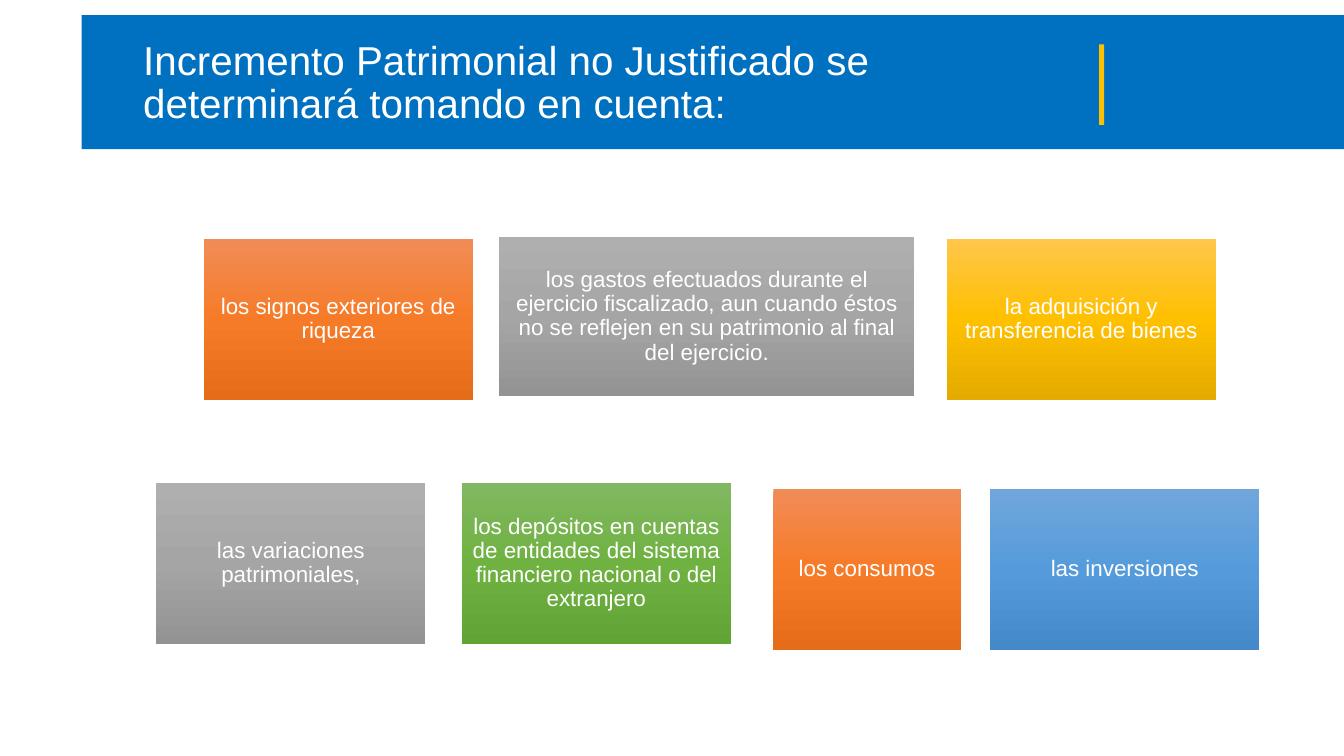
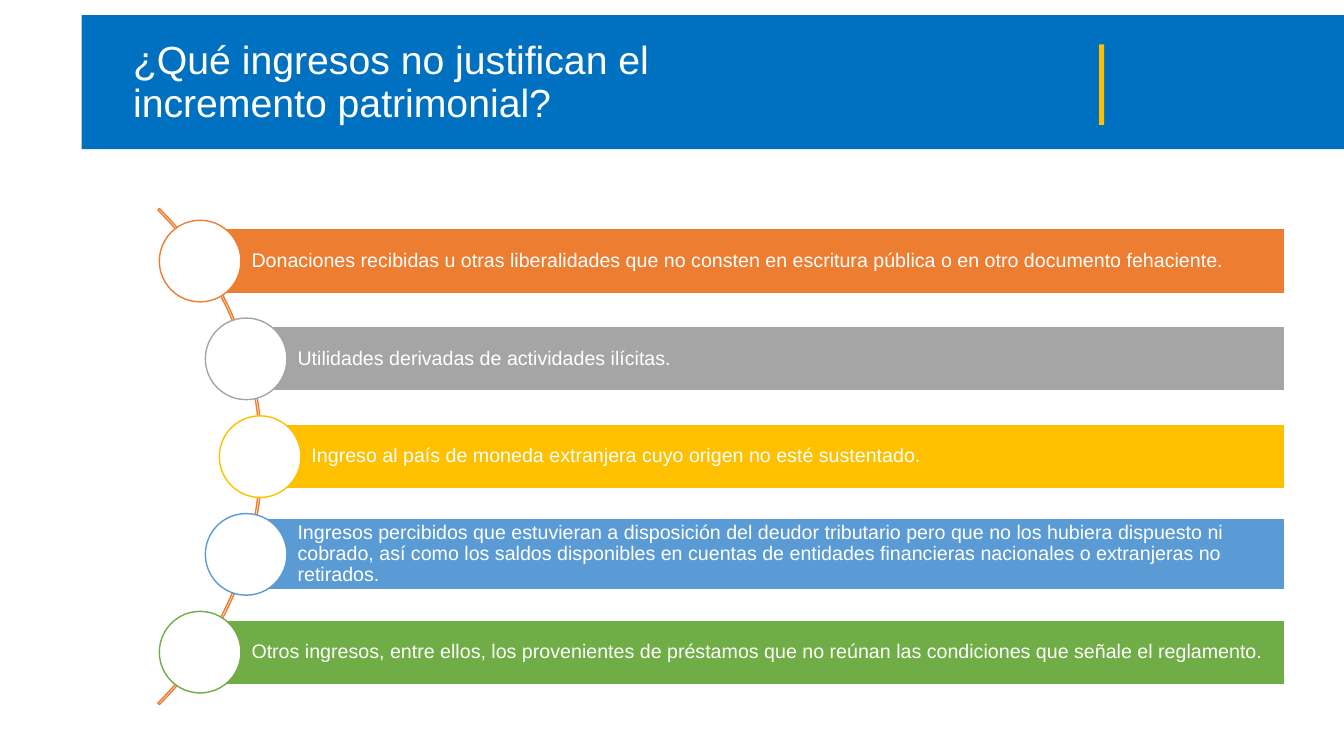
import copy
import dataclasses
import math

import pptx
import pptx.dml.color
import pptx.enum.shapes
import pptx.enum.text
import pptx.util

Inches = pptx.util.Inches
Shape = pptx.enum.shapes.MSO_SHAPE
Align = pptx.enum.text.PP_ALIGN
Anchor = pptx.enum.text.MSO_ANCHOR


@dataclasses.dataclass(frozen=True)
class Theme:
    font: str = "Arial"
    white: str = "FFFFFF"
    band: str = "0070C0"
    orange: str = "ED7D31"
    gray: str = "A5A5A5"
    gold: str = "FFC000"
    blue: str = "5B9BD5"
    green: str = "70AD47"
    orange_shades: tuple = ("F18C57", "F67B28", "E56C19")
    gray_shades: tuple = ("AFAFAF", "A5A5A5", "939393")
    gold_shades: tuple = ("FFC64B", "FFC000", "E3AB00")
    blue_shades: tuple = ("71A6DB", "559BDB", "448ACA")
    green_shades: tuple = ("81B861", "6FB242", "62A336")
    card_size: float = 16
    bar_size: float = 14
    line_width: float = 1
    line_spacing: float = 0.9


THEME = Theme()

# Left, top, width, height, gradient, text
CARDS = [
    (2.02, 2.37, 2.67, 1.6, THEME.orange_shades, "los signos exteriores de riqueza"),
    (4.95, 2.35, 4.12, 1.58, THEME.gray_shades,
     "los gastos efectuados durante el ejercicio fiscalizado, aun cuando éstos "
     "no se reflejen en su patrimonio al final del ejercicio."),
    (9.39, 2.37, 2.67, 1.6, THEME.gold_shades, "la adquisición y transferencia de bienes"),
    (1.55, 4.79, 2.67, 1.6, THEME.gray_shades, "las variaciones patrimoniales,"),
    (4.58, 4.79, 2.67, 1.6, THEME.green_shades,
     "los depósitos en cuentas de entidades del sistema financiero nacional o "
     "del extranjero"),
    (7.67, 4.85, 1.86, 1.6, THEME.orange_shades, "los consumos"),
    (9.82, 4.85, 2.67, 1.6, THEME.blue_shades, "las inversiones"),
]

# Colour, bar height, text
INCOMES = [
    (THEME.orange, 0.64,
     "Donaciones recibidas u otras liberalidades que no consten en escritura "
     "pública o en otro documento fehaciente."),
    (THEME.gray, 0.64, "Utilidades derivadas de actividades ilícitas."),
    (THEME.gold, 0.64,
     "Ingreso al país de moneda extranjera cuyo origen no esté sustentado."),
    (THEME.blue, 0.71,
     "Ingresos percibidos que estuvieran a disposición del deudor tributario pero "
     "que no los hubiera dispuesto ni cobrado, así como los saldos disponibles en "
     "cuentas de entidades financieras nacionales o extranjeras no retirados."),
    (THEME.green, 0.64,
     "Otros ingresos, entre ellos, los provenientes de préstamos que no reúnan "
     "las condiciones que señale el reglamento."),
]


def rgb(color):
    return pptx.dml.color.RGBColor.from_string(color)


def set_values(target, values):
    for name, value in values.items():
        setattr(target, name, value)


def add_figure(page, kind, area, fill=None, line=None):
    """Add a flat preset shape; area is left, top, width, height in inches."""
    figure = page.shapes.add_shape(kind, *map(Inches, area))
    figure.shadow.inherit = False
    if fill:
        figure.fill.solid()
        figure.fill.fore_color.rgb = rgb(fill)
    else:
        figure.fill.background()
    if line:
        figure.line.color.rgb = rgb(line)
        figure.line.width = pptx.util.Pt(THEME.line_width)
    else:
        figure.line.fill.background()
    return figure


def shade(figure, colors):
    """Fill a shape with evenly spaced colours from top to bottom."""
    figure.fill.gradient()
    stop_list = figure._element.spPr.xpath(".//a:gsLst")[0]
    while len(stop_list) < len(colors):
        stop_list.append(copy.deepcopy(stop_list[0]))
    for index, (stop, color) in enumerate(zip(figure.fill.gradient_stops, colors)):
        stop.position = index / (len(colors) - 1)
        stop.color.rgb = rgb(color)
    figure.fill.gradient_angle = 270


def write(box, text, size, alignment, margins):
    """Write one white paragraph; margins are left, top, right, bottom."""
    frame = box.text_frame
    frame.text = text
    sides = ("margin_left", "margin_top", "margin_right", "margin_bottom")
    set_values(frame, dict(zip(sides, map(Inches, margins))))
    set_values(frame, {
        "word_wrap": True,
        "auto_size": pptx.enum.text.MSO_AUTO_SIZE.NONE,
        "vertical_anchor": Anchor.MIDDLE,
    })
    para = frame.paragraphs[0]
    set_values(para, {"alignment": alignment, "line_spacing": THEME.line_spacing})
    for span in para.runs:
        set_values(span.font, {"name": THEME.font, "size": pptx.util.Pt(size)})
        span.font.color.rgb = rgb(THEME.white)


def add_band_to_layout(page):
    """Place the title band on the layout, behind everything on its slides."""
    band = add_figure(page, Shape.RECTANGLE, (0.81, 0.15, 12.52, 1.33), THEME.band)
    accent = add_figure(page, Shape.RECTANGLE, (10.9, 0.44, 0.05, 0.8), THEME.gold)
    tree = page.slide_layout.shapes._spTree
    for position, figure in enumerate((band, accent), start=2):
        tree.insert(position, figure._element)


def set_title(page, text, area, size):
    title = page.shapes.title
    set_values(title, dict(zip(("left", "top", "width", "height"), map(Inches, area))))
    write(title, text, size, Align.LEFT, (0.1, 0.05, 0.1, 0.05))


def add_card(page, area, colors, text):
    card = add_figure(page, Shape.RECTANGLE, area)
    shade(card, colors)
    write(card, text, THEME.card_size, Align.CENTER, (0.07,) * 4)


def add_income_list(page):
    """Draw bars whose circles follow an arc centred left of the slide."""
    center_x, center_y, arc_radius = -0.88, 4.53, 3.48
    circle_path_radius, circle_size = 3.46, 0.81
    pitch, bar_right = 0.97, 12.74

    arc = add_figure(
        page, Shape.BLOCK_ARC,
        (center_x - arc_radius, center_y - arc_radius, 2 * arc_radius, 2 * arc_radius),
        line=THEME.orange)
    for index, value in enumerate((189, 27, 0.003)):
        arc.adjustments[index] = value

    for index, (color, height, text) in enumerate(INCOMES):
        offset = (index - (len(INCOMES) - 1) / 2) * pitch
        middle = center_y + offset
        left = center_x + math.sqrt(circle_path_radius ** 2 - offset ** 2)
        bar = add_figure(page, Shape.RECTANGLE,
                         (left, middle - height / 2, bar_right - left, height),
                         color, THEME.white)
        write(bar, text, THEME.bar_size, Align.LEFT, (0.51, 0.04, 0.04, 0.04))
        add_figure(page, Shape.OVAL,
                   (left - circle_size / 2, middle - circle_size / 2,
                    circle_size, circle_size),
                   THEME.white, color)


def main():
    deck = pptx.Presentation()
    set_values(deck, {"slide_width": Inches(13.33), "slide_height": Inches(7.5)})
    layout = deck.slide_layouts.get_by_name("Title Only")

    factors = deck.slides.add_slide(layout)
    add_band_to_layout(factors)
    set_title(factors,
              "Incremento Patrimonial no Justificado se determinará tomando en cuenta:",
              (1.32, 0.36, 9.22, 0.95), 28.8)
    for *area, colors, text in CARDS:
        add_card(factors, area, colors, text)

    incomes = deck.slides.add_slide(layout)
    set_title(incomes, "¿Qué ingresos no justifican el\vincremento patrimonial?",
              (1.22, 0.35, 9.79, 0.95), 28)
    add_income_list(incomes)

    deck.save("out.pptx")


if __name__ == "__main__":
    main()
